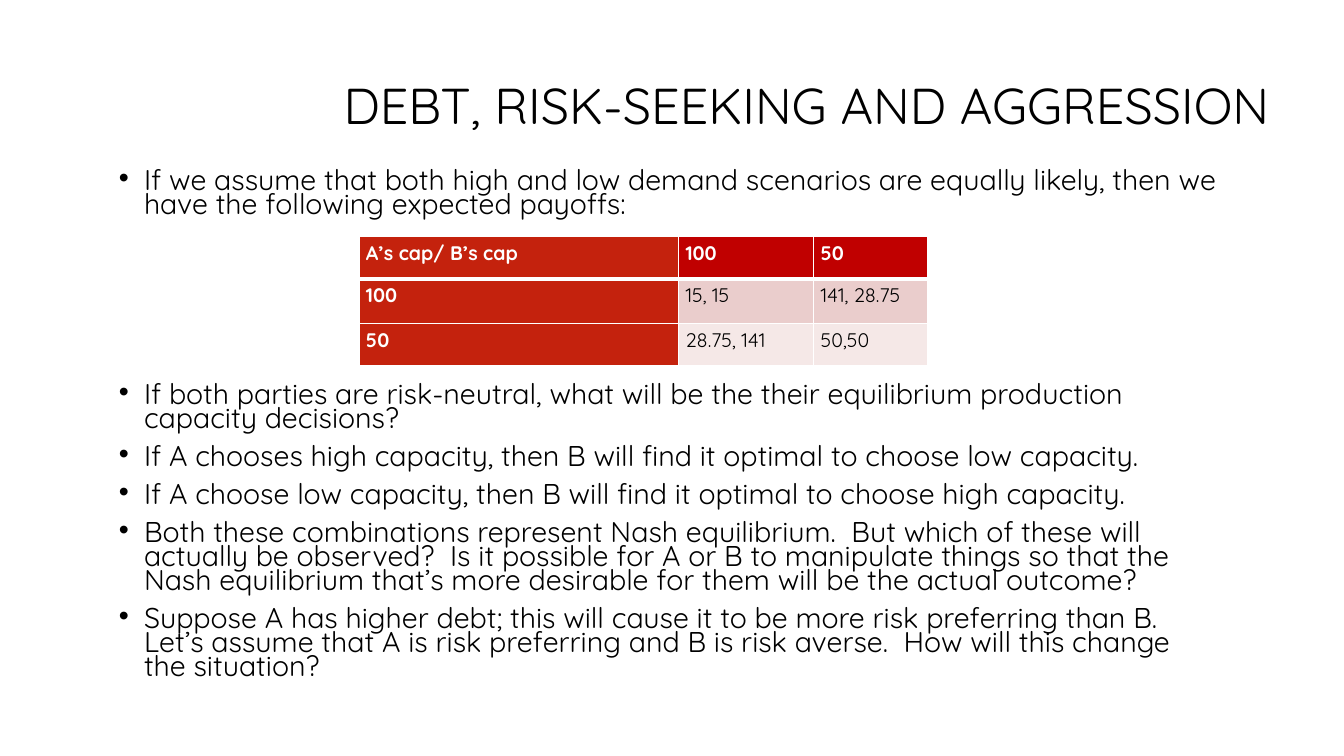
"""Build the slide on debt, risk-seeking and aggression with its payoff table."""

from dataclasses import dataclass

from lxml.etree import SubElement
from pptx import Presentation
from pptx.dml.color import RGBColor
from pptx.enum.text import MSO_ANCHOR, PP_ALIGN
from pptx.oxml.ns import qn
from pptx.slide import Slide
from pptx.table import _Cell
from pptx.text.text import _Paragraph
from pptx.util import Inches, Pt

FONT = "Quicksand"
BLACK = RGBColor(0x00, 0x00, 0x00)
WHITE = RGBColor(0xFF, 0xFF, 0xFF)
BRICK = RGBColor(0xC4, 0x22, 0x0D)
CRIMSON = RGBColor(0xC0, 0x00, 0x00)
ROSE = RGBColor(0xEA, 0xCD, 0xCC)
BLUSH = RGBColor(0xF5, 0xE8, 0xE7)


@dataclass(frozen=True)
class BulletBox:
    top: float
    height: float
    bullets: tuple[str, ...]


@dataclass(frozen=True)
class PayoffRow:
    height: float
    texts: tuple[str, str, str]
    value_fill: RGBColor


BULLET_BOXES = (
    BulletBox(1.65, 0.65, (
        "If we assume that both high and low demand scenarios are equally likely, "
        "then we have the following expected payoffs:",
    )),
    BulletBox(3.77, 3.19, (
        "If both parties are risk-neutral, what will be the their equilibrium "
        "production capacity decisions?",
        "If A chooses high capacity, then B will find it optimal to choose low capacity.",
        "If A choose low capacity, then B will find it optimal to choose high capacity.",
        "Both these combinations represent Nash equilibrium.  But which of these will "
        "actually be observed?  Is it possible for A or B to manipulate things so that "
        "the Nash equilibrium that’s more desirable for them will be the actual outcome?",
        "Suppose A has higher debt; this will cause it to be more risk preferring than B.  "
        "Let’s assume that A is risk preferring and B is risk averse.  How will this "
        "change the situation?",
    )),
)
COLUMN_WIDTHS = (3.17, 1.34, 1.13)
PAYOFF_ROWS = (
    PayoffRow(0.42, ("A’s cap/ B’s cap", "100", "50"), CRIMSON),
    PayoffRow(0.44, ("100", "15, 15", "141, 28.75"), ROSE),
    PayoffRow(0.42, ("50", "28.75, 141", "50,50"), BLUSH),
)


def add_text(paragraph: _Paragraph, text: str, size: float, color: RGBColor,
             bold: bool = False) -> None:
    """Add one formatted run to a paragraph."""
    run = paragraph.add_run()
    run.text = text
    run.font.name = FONT
    run.font.size = Pt(size)
    run.font.bold = bold
    run.font.color.rgb = color


def add_title(slide: Slide, text: str) -> None:
    """Place and format the title placeholder."""
    title = slide.shapes.title
    title.left, title.top = Inches(3.26), Inches(0.73)
    title.width, title.height = Inches(9.43), Inches(0.69)
    title.text_frame.vertical_anchor = MSO_ANCHOR.MIDDLE
    paragraph = title.text_frame.paragraphs[0]
    paragraph.alignment = PP_ALIGN.RIGHT
    paragraph.line_spacing = 0.9
    add_text(paragraph, text, 36, BLACK)


def add_bullet_box(slide: Slide, box: BulletBox) -> None:
    """Add a text box of bulleted paragraphs."""
    shape = slide.shapes.add_textbox(
        Inches(1.08), Inches(box.top), Inches(11.11), Inches(box.height))
    frame = shape.text_frame
    frame.word_wrap = True
    for index, text in enumerate(box.bullets):
        paragraph = frame.add_paragraph() if index else frame.paragraphs[0]
        paragraph.line_spacing = 0.7
        paragraph.space_before = Pt(10 if index else 0)
        properties = paragraph._p.get_or_add_pPr()
        properties.set("marL", str(Inches(0.25)))
        properties.set("indent", str(Inches(-0.25)))
        SubElement(properties, qn("a:buFont"), typeface="Arial")
        SubElement(properties, qn("a:buChar"), char="•")
        add_text(paragraph, text, 20.4, BLACK)


def add_borders(cell: _Cell, bottom: float, top: float) -> None:
    """Draw white borders around a table cell."""
    properties = cell._tc.get_or_add_tcPr()
    for side, width in (("L", 1), ("R", 1), ("T", top), ("B", bottom)):
        line = SubElement(properties, qn(f"a:ln{side}"), w=str(Pt(width)))
        fill = SubElement(line, qn("a:solidFill"))
        SubElement(fill, qn("a:srgbClr"), val=str(WHITE))


def add_payoff_table(slide: Slide) -> None:
    """Add the table of expected payoffs."""
    table = slide.shapes.add_table(
        len(PAYOFF_ROWS), len(COLUMN_WIDTHS), Inches(3.56), Inches(2.35),
        Inches(sum(COLUMN_WIDTHS)), Inches(sum(row.height for row in PAYOFF_ROWS))).table
    for column, width in zip(table.columns, COLUMN_WIDTHS):
        column.width = Inches(width)
    for row_index, row in enumerate(PAYOFF_ROWS):
        table.rows[row_index].height = Inches(row.height)
        for column_index, text in enumerate(row.texts):
            cell = table.cell(row_index, column_index)
            is_heading = row_index == 0 or column_index == 0
            cell.margin_left = cell.margin_right = Inches(0.07)
            cell.margin_top = cell.margin_bottom = Inches(0.04)
            add_borders(cell, bottom=3 if row_index == 0 else 1,
                        top=3 if row_index == 1 else 1)
            cell.fill.solid()
            cell.fill.fore_color.rgb = row.value_fill if column_index else BRICK
            add_text(cell.text_frame.paragraphs[0], text, 14,
                     WHITE if is_heading else BLACK, is_heading)


def main() -> None:
    """Create and save the presentation."""
    presentation = Presentation()
    presentation.slide_width = Inches(13.33)
    presentation.slide_height = Inches(7.5)
    slide = presentation.slides.add_slide(presentation.slide_layouts.get_by_name("Title Only"))
    add_title(slide, "DEBT, RISK-SEEKING AND AGGRESSION")
    for box in BULLET_BOXES:
        add_bullet_box(slide, box)
    add_payoff_table(slide)
    presentation.save("out.pptx")


if __name__ == "__main__":
    main()
